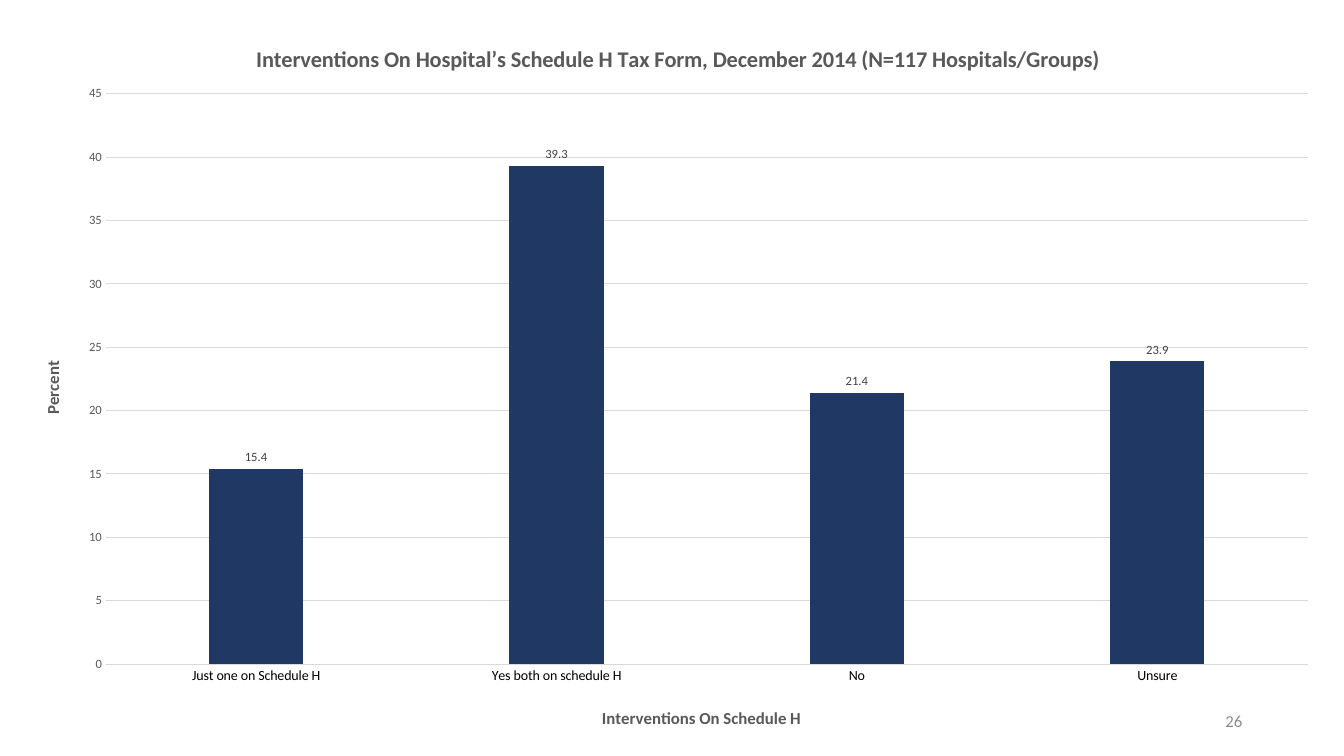
from dataclasses import dataclass

from lxml import etree
from pptx import Presentation
from pptx.chart.data import CategoryChartData
from pptx.dml.color import RGBColor
from pptx.enum.chart import XL_CHART_TYPE, XL_LABEL_POSITION, XL_TICK_MARK
from pptx.enum.text import MSO_ANCHOR, PP_ALIGN
from pptx.oxml.ns import qn
from pptx.util import Emu, Pt

COLUMNS = XL_CHART_TYPE.COLUMN_CLUSTERED
OUTSIDE_END = XL_LABEL_POSITION.OUTSIDE_END
NO_TICK = XL_TICK_MARK.NONE
MIDDLE = MSO_ANCHOR.MIDDLE
RIGHT = PP_ALIGN.RIGHT

EMU_PER_PX = 9144  # 100 px to the inch


@dataclass(frozen=True)
class Theme:
    font: str = "Calibri"
    bar: str = "203864"
    grid: str = "D9D9D9"
    black: str = "000000"
    grey: str = "595959"
    label: str = "404040"
    number: str = "8C8C8C"
    title_size: int = 16
    text_size: int = 12
    category_size: int = 10
    small_size: int = 9


@dataclass(frozen=True)
class Box:
    left: int
    top: int
    width: int
    height: int

    def emu(self) -> list[Emu]:
        return [px(n) for n in (self.left, self.top, self.width, self.height)]


@dataclass(frozen=True)
class TitleItem:
    owner: object
    text: str
    size: int
    left: int
    top: int


THEME = Theme()
CHART_BOX = Box(15, 15, 1308, 724)
PLOT_BOX = Box(105, 93, 1192, 566)
NUMBER_BOX = Box(942, 695, 300, 40)
PERCENTAGES = {
    "Just one on Schedule H": 15.4,
    "Yes both on schedule H": 39.3,
    "No": 21.4,
    "Unsure": 23.9,
}


def px(length: int) -> Emu:
    return Emu(length * EMU_PER_PX)


def style_font(font, size: int, color: str, bold: bool = False) -> None:
    formats = {"name": THEME.font, "size": Pt(size), "bold": bold}
    for name, value in formats.items():
        setattr(font, name, value)
    font.color.rgb = RGBColor.from_string(color)


def style_line(line) -> None:
    line.width = Pt(0.75)
    line.color.rgb = RGBColor.from_string(THEME.grid)


def place(element, index: int, modes: dict[str, str], fractions: dict[str, float]) -> None:
    """Give a chart part a manual layout, as fractions of the chart frame."""
    for previous in element.findall(qn("c:layout")):
        element.remove(previous)
    layout = etree.Element(qn("c:layout"))
    manual = etree.SubElement(layout, qn("c:manualLayout"))
    settings = modes | {"xMode": "edge", "yMode": "edge"}
    settings |= {key: f"{value:.4f}" for key, value in fractions.items()}
    for key, value in settings.items():
        etree.SubElement(manual, qn(f"c:{key}")).set("val", value)
    element.insert(index, layout)


def offset(left: int, top: int) -> dict[str, float]:
    return {
        "x": (left - CHART_BOX.left) / CHART_BOX.width,
        "y": (top - CHART_BOX.top) / CHART_BOX.height,
    }


def add_title(item: TitleItem) -> None:
    frame = item.owner.text_frame
    frame.text = item.text
    style_font(frame.paragraphs[0].runs[0].font, item.size, THEME.grey, bold=True)
    place(item.owner._element, 1, {}, offset(item.left, item.top))


def add_percent_chart(slide) -> None:
    data = CategoryChartData(number_format="0.0")
    data.categories = list(PERCENTAGES)
    data.add_series("Series 1", list(PERCENTAGES.values()))
    chart = slide.shapes.add_chart(COLUMNS, *CHART_BOX.emu(), data).chart
    chart.has_legend = False
    style_font(chart.font, THEME.category_size, THEME.black)

    # Columns and their labels
    plot = chart.plots[0]
    formats = {"gap_width": 219, "overlap": -27, "vary_by_categories": False,
               "has_data_labels": True}
    for name, value in formats.items():
        setattr(plot, name, value)
    fill = plot.series[0].format.fill
    fill.solid()
    fill.fore_color.rgb = RGBColor.from_string(THEME.bar)
    labels = plot.data_labels
    formats = {"show_value": True, "number_format": "0.0",
               "number_format_is_linked": False, "position": OUTSIDE_END}
    for name, value in formats.items():
        setattr(labels, name, value)
    style_font(labels.font, THEME.small_size, THEME.label)

    # Axes
    categories, values = chart.category_axis, chart.value_axis
    for axis in (categories, values):
        axis.major_tick_mark = axis.minor_tick_mark = NO_TICK
    style_font(categories.tick_labels.font, THEME.category_size, THEME.black)
    style_font(values.tick_labels.font, THEME.small_size, THEME.grey)
    style_line(categories.format.line)
    style_line(values.major_gridlines.format.line)
    values.format.line.fill.background()
    formats = {"minimum_scale": 0, "maximum_scale": 45, "major_unit": 5}
    for name, value in formats.items():
        setattr(values, name, value)
    values.tick_labels.number_format = "0"
    values.tick_labels.number_format_is_linked = False

    # Titles and plot position
    heading = "Interventions On Hospital’s Schedule H Tax Form, December 2014 (N=117 Hospitals/Groups)"
    titles = [
        TitleItem(chart.chart_title, heading, THEME.title_size, 250, 40),
        TitleItem(categories.axis_title, "Interventions On Schedule H", THEME.text_size, 594, 698),
        TitleItem(values.axis_title, "Percent", THEME.text_size, 38, 355),
    ]
    for item in titles:
        add_title(item)
    size = {"w": PLOT_BOX.width / CHART_BOX.width, "h": PLOT_BOX.height / CHART_BOX.height}
    plot_area = chart._chartSpace.find(f".//{qn('c:plotArea')}")
    place(plot_area, 0, {"layoutTarget": "inner"}, offset(PLOT_BOX.left, PLOT_BOX.top) | size)


def add_page_number(slide) -> None:
    frame = slide.shapes.add_textbox(*NUMBER_BOX.emu()).text_frame
    frame.word_wrap = True
    frame.vertical_anchor = MIDDLE
    paragraph = frame.paragraphs[0]
    paragraph.alignment = RIGHT
    run = paragraph.add_run()
    run.text = "26"
    style_font(run.font, THEME.text_size, THEME.number)


def main() -> None:
    presentation = Presentation()
    presentation.slide_width, presentation.slide_height = px(1333), px(750)
    slide = presentation.slides.add_slide(presentation.slide_layouts[6])
    add_percent_chart(slide)
    add_page_number(slide)
    presentation.save("out.pptx")


if __name__ == "__main__":
    main()
